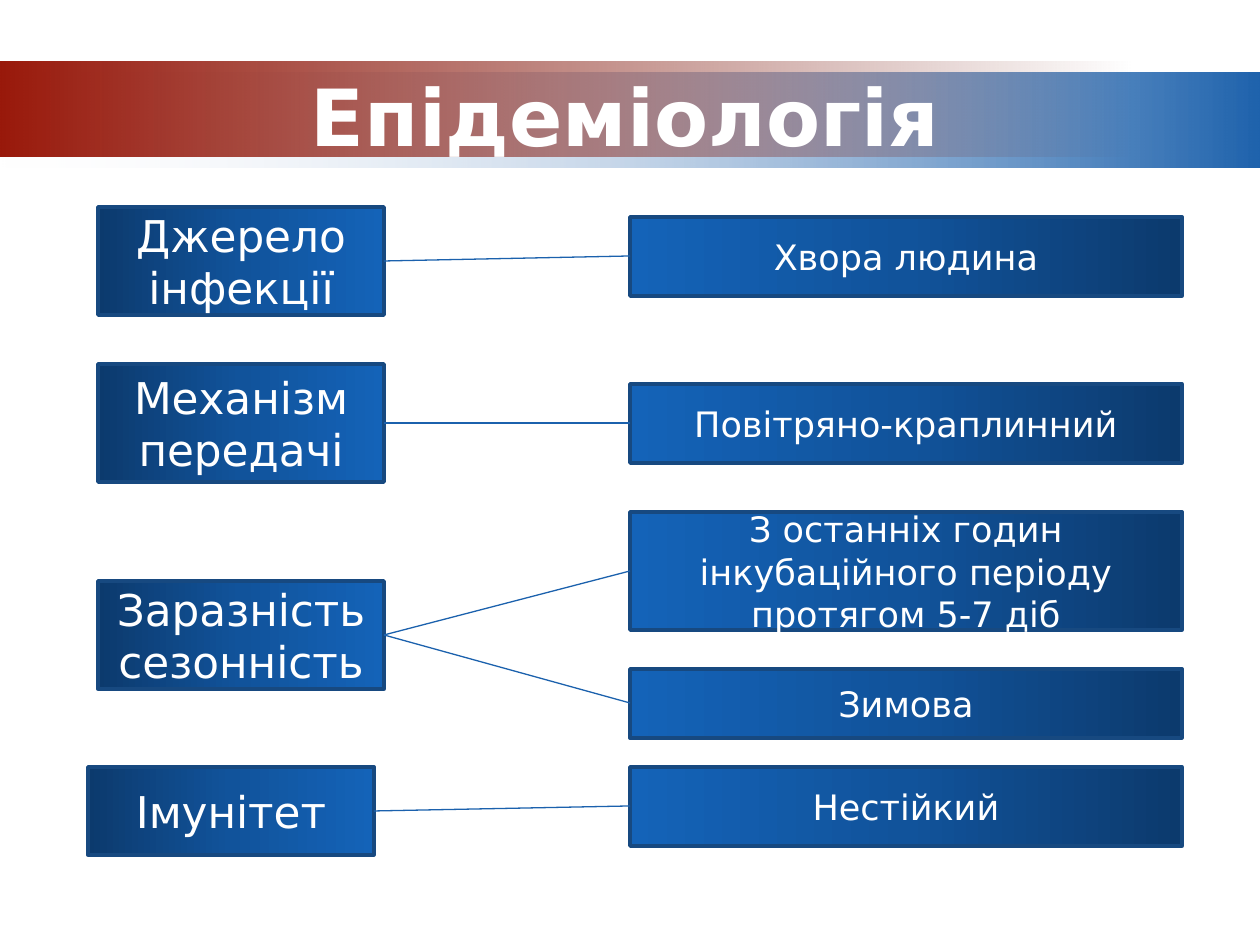
from dataclasses import dataclass

from lxml import etree
from pptx import Presentation
from pptx.dml.color import RGBColor
from pptx.enum import shapes, text
from pptx.oxml.ns import qn
from pptx.util import Emu, Pt

PX = 914400 / 126
FONT = "DejaVu Sans"
WHITE = RGBColor(0xFF, 0xFF, 0xFF)
PALE = RGBColor(0xF1, 0xF2, 0xF7)
SKY = RGBColor(0x1F, 0x63, 0xAD)
RED = RGBColor(0x99, 0x19, 0x0B)
MAROON = RGBColor(0x6D, 0x12, 0x08)
NAVY = RGBColor(0x0C, 0x3A, 0x6D)
MID_BLUE = RGBColor(0x11, 0x53, 0x9B)
BLUE = RGBColor(0x14, 0x63, 0xB8)
BORDER = RGBColor(0x17, 0x49, 0x80)
LINK = RGBColor(0x1B, 0x61, 0xAD)

ANSWER_LEFT, ANSWER_WIDTH = 630, 552
TOPIC_LEFT, TOPIC_WIDTH = 98, 286


@dataclass(frozen=True)
class Stop:
    position: int
    color: RGBColor
    alpha: int = 100


@dataclass(frozen=True)
class Box:
    wording: str
    top: int
    height: int
    left: int = ANSWER_LEFT
    width: int = ANSWER_WIDTH
    size: int = 20
    angle: int = 180


@dataclass(frozen=True)
class Topic:
    box: Box
    answers: tuple[Box, ...]


def topic_box(wording: str, top: int, height: int, left: int = TOPIC_LEFT) -> Box:
    return Box(wording, top, height, left, TOPIC_WIDTH, size=25, angle=0)


BOX_STOPS = (Stop(0, NAVY), Stop(50, MID_BLUE), Stop(100, BLUE))
TOPICS = (
    Topic(topic_box("Джерело інфекції", 207, 108), (Box("Хвора людина", 217, 79),)),
    Topic(topic_box("Механізм передачі", 364, 118),
          (Box("Повітряно-краплинний", 384, 79),)),
    Topic(topic_box("Заразність\nсезонність", 581, 108),
          (Box("З останніх годин інкубаційного періоду протягом 5-7 діб", 512, 118),
           Box("Зимова", 669, 69))),
    Topic(topic_box("Імунітет", 767, 88, left=88), (Box("Нестійкий", 767, 79),)),
)


def px(*lengths: int) -> list[Emu]:
    return [Emu(round(length * PX)) for length in lengths]


def fill_gradient(shape, stops: tuple[Stop, ...], angle: int) -> None:
    shape.fill.gradient()
    shape.fill.gradient_angle = angle
    stop_list = next(shape.element.iter(qn("a:gsLst")))
    for old_stop in list(stop_list):
        stop_list.remove(old_stop)
    for stop in stops:
        entry = etree.SubElement(stop_list, qn("a:gs"), pos=str(stop.position * 1000))
        color = etree.SubElement(entry, qn("a:srgbClr"), val=str(stop.color))
        if stop.alpha < 100:
            etree.SubElement(color, qn("a:alpha"), val=str(stop.alpha * 1000))


def add_gradient_rectangle(slide, left: int, top: int, width: int, height: int,
                           stops: tuple[Stop, ...], angle: int = 0):
    shape = slide.shapes.add_shape(
        shapes.MSO_SHAPE.RECTANGLE, *px(left, top, width, height))
    shape.shadow.inherit = False
    shape.line.fill.background()
    fill_gradient(shape, stops, angle)
    return shape


def write_centred(shape, wording: str, size: int, bold: bool = False) -> None:
    frame = shape.text_frame
    frame.text = wording
    frame.word_wrap = True
    frame.vertical_anchor = text.MSO_ANCHOR.MIDDLE
    for paragraph in frame.paragraphs:
        paragraph.alignment = text.PP_ALIGN.CENTER
        font = paragraph.font
        font.name, font.size, font.bold = FONT, Pt(size), bold
        font.color.rgb = WHITE


def add_box(slide, box: Box) -> None:
    shape = add_gradient_rectangle(
        slide, box.left, box.top, box.width, box.height, BOX_STOPS, box.angle)
    shape.line.color.rgb = BORDER
    shape.line.width = Pt(2)
    write_centred(shape, box.wording, box.size)


def add_link(slide, topic: Box, answer: Box) -> None:
    """Join the right middle of a topic to the left middle of its answer."""
    connector = slide.shapes.add_connector(
        shapes.MSO_CONNECTOR.STRAIGHT,
        *px(topic.left + topic.width, topic.top + topic.height // 2,
            answer.left, answer.top + answer.height // 2))
    connector.line.color.rgb = LINK
    connector.line.width = Pt(0.75)
    etree.SubElement(connector.element.spPr, qn("a:effectLst"))


def add_header(slide) -> None:
    add_gradient_rectangle(slide, 0, 73, 1260, 95, (Stop(0, PALE, 0), Stop(100, SKY)))
    add_gradient_rectangle(slide, 0, 62, 1134, 95, (Stop(0, RED), Stop(100, MAROON, 0)))
    title = slide.shapes.add_textbox(*px(116, 76, 1018, 78))
    write_centred(title, "Епідеміологія", 45, bold=True)


def main() -> None:
    presentation = Presentation()
    presentation.slide_width, presentation.slide_height = px(1260, 945)
    slide = presentation.slides.add_slide(presentation.slide_layouts[6])
    add_header(slide)
    for topic in TOPICS:
        add_box(slide, topic.box)
        for answer in topic.answers:
            add_box(slide, answer)
            add_link(slide, topic.box, answer)
    presentation.save("out.pptx")


if __name__ == "__main__":
    main()
